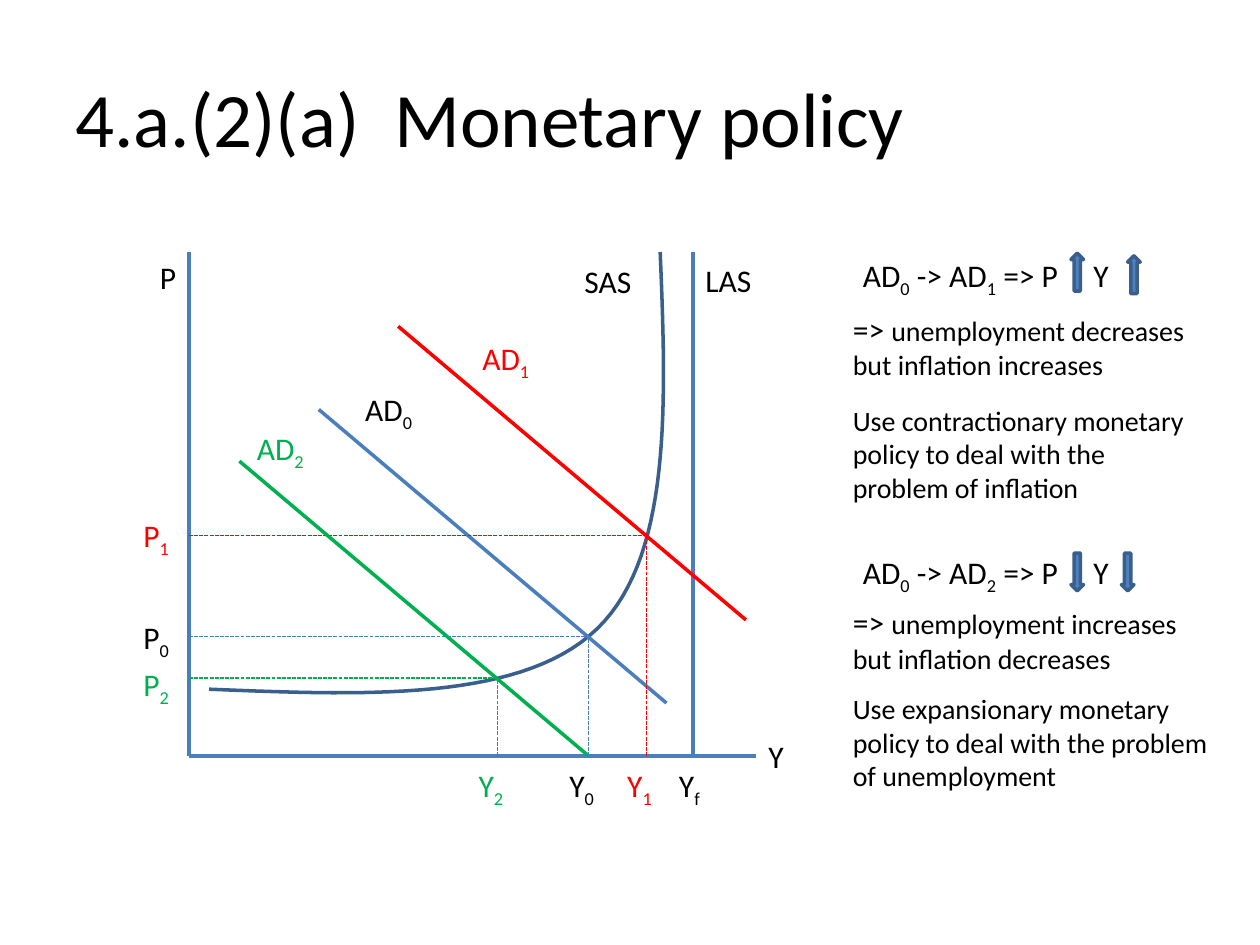
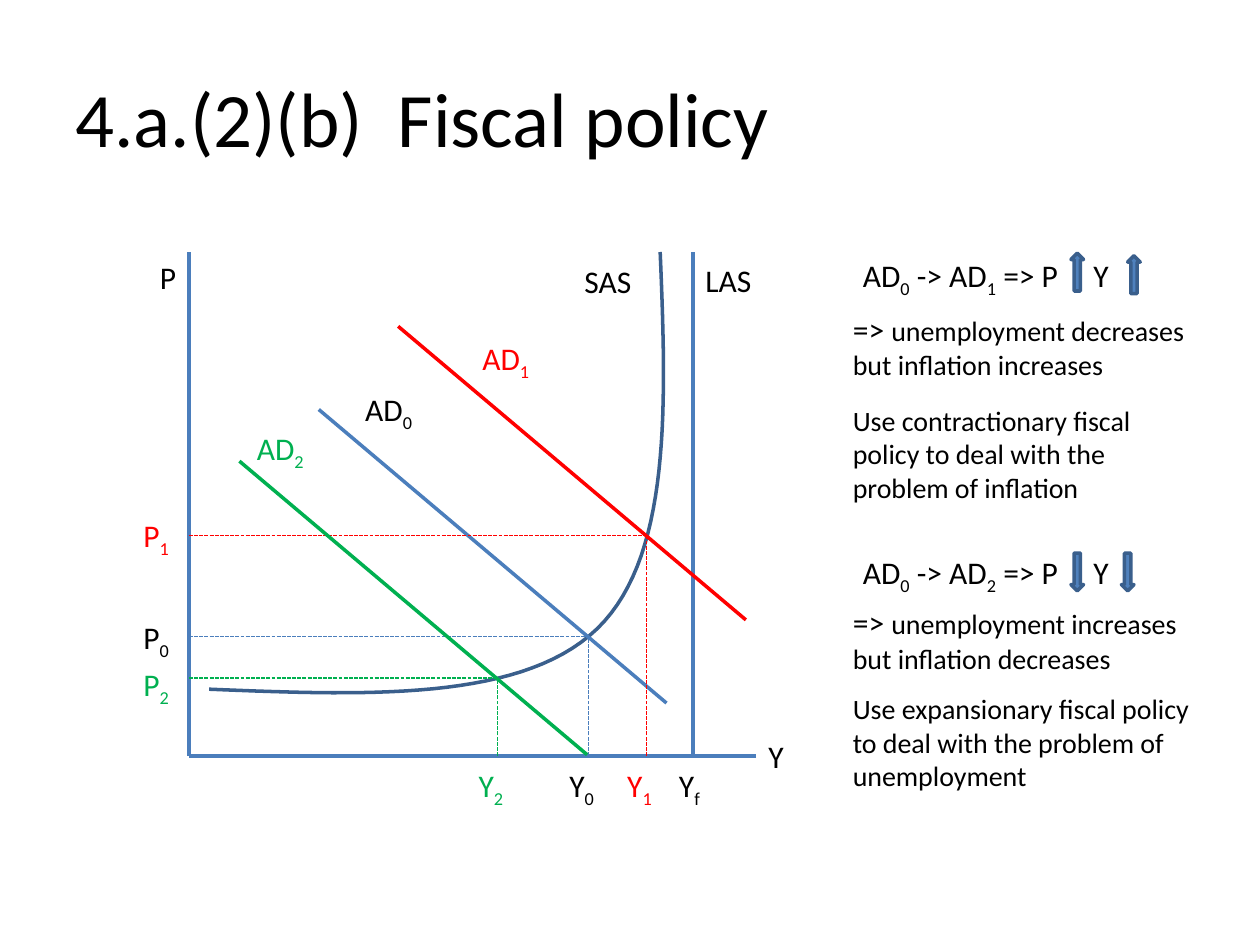
from lxml import etree
from pptx import Presentation
from pptx.dml.color import RGBColor
from pptx.enum.dml import MSO_LINE_DASH_STYLE as DASH
from pptx.enum.shapes import MSO_CONNECTOR, MSO_SHAPE
from pptx.enum.text import MSO_ANCHOR, MSO_AUTO_SIZE, PP_ALIGN
from pptx.oxml.ns import qn
from pptx.util import Inches, Pt

FONT = "Calibri"
COLORS = {"text": "000000", "axis": "4B7EBC", "curve": "3A5F8C",
          "arrow": "4F81BD", "red": "FF0000", "green": "00B050"}

# Slide content: title and the policy named in the advice
SLIDES = [("4.a.(2)(a)  Monetary policy", "monetary"),
          ("4.a.(2)(b)  Fiscal policy", "fiscal")]

# Diagram geometry in inches; an underscore marks a subscript character
ORIGIN_X, ORIGIN_Y = 1.5, 6
AXIS_TOP, AXIS_RIGHT, FULL_OUTPUT_X = 2, 6, 5.5
AD_RUN, AD_DROP = 2.76, 2.33
LABEL_HEIGHT = 0.4
SAS_START = (1.66, 5.47)
SAS_BEZIERS = [((2.9, 5.52), (4.14, 5.57), (4.74, 4.99)),
               ((5.33, 4.42), (5.29, 3.21), (5.24, 2))]
SAS_STEPS = 30

# Fixed labels: text, left, top, width
LABELS = [("P", 1.17, 2, 0.33), ("Y", 6, 5.8, 0.33), ("SAS", 4.54, 2.03, 0.62),
          ("LAS", 5.5, 2.02, 0.62), ("Y_f", 5.29, 6.03, 0.42)]

# Demand curves: number, line colour, label colour, line start,
# label position, equilibrium (output, price), top of the price label
DEMAND_CURVES = [
    (0, "axis", "text", (2.53, 3.25), (2.8, 3.05), (4.67, 5.05), 4.86),
    (1, "red", "red", (3.16, 2.59), (3.73, 2.64), (5.13, 4.25), 4.05),
    (2, "green", "green", (1.9, 3.66), (1.94, 3.36), (3.95, 5.38), 5.23),
]

# Outcomes beside the diagram
OUTCOMES = [
    {"shift": "AD_0 -> AD_1 => P\tY", "shift_top": 1.98,
     "arrow": MSO_SHAPE.UP_ARROW, "arrows_at": [(8.5, 2.01), (8.95, 2.03)],
     "effect": "unemployment decreases but inflation increases", "effect_top": 2.41,
     "advice": "Use contractionary {} policy to deal with the problem of inflation",
     "advice_top": 3.15, "advice_width": 2.92},
    {"shift": "AD_0 -> AD_2 => P\tY", "shift_top": 4.34,
     "arrow": MSO_SHAPE.DOWN_ARROW, "arrows_at": [(8.5, 4.39), (8.9, 4.39)],
     "effect": "unemployment increases but inflation decreases", "effect_top": 4.74,
     "advice": "Use expansionary {} policy to deal with the problem of unemployment",
     "advice_top": 5.44, "advice_width": 3.04},
]
SHIFT_LEFT, NOTE_LEFT, Y_TAB = 6.75, 6.67, 1.83


def rgb(color):
    return RGBColor.from_string(COLORS[color])


def style_font(font, size, color="text"):
    font.name, font.size = FONT, Pt(size)
    font.color.rgb = rgb(color)


def add_run(paragraph, text, size, color="text", subscript=False):
    run = paragraph.add_run()
    run.text = text
    style_font(run.font, size, color)
    if subscript:
        run.font._element.set("baseline", "-25000")


def add_text(slide, left, top, width, height, parts, color="text"):
    """Add a text box from (text, size) parts."""
    box = slide.shapes.add_textbox(*map(Inches, (left, top, width, height)))
    frame = box.text_frame
    frame.word_wrap = True
    frame.auto_size = MSO_AUTO_SIZE.SHAPE_TO_FIT_TEXT
    paragraph = frame.paragraphs[0]
    for text, size in parts:
        plain, *marked = text.split("_")
        add_run(paragraph, plain, size, color)
        for piece in marked:
            add_run(paragraph, piece[0], size, color, subscript=True)
            if piece[1:]:
                add_run(paragraph, piece[1:], size, color)
    return paragraph


def add_label(slide, text, left, top, width, color="text"):
    return add_text(slide, left, top, width, LABEL_HEIGHT, [(text, 18)], color)


def add_line(slide, start, end, color, width=2, dash=None):
    line = slide.shapes.add_connector(
        MSO_CONNECTOR.STRAIGHT, *map(Inches, (*start, *end)))
    line.line.color.rgb = rgb(color)
    line.line.width = Pt(width)
    if dash:
        line.line.dash_style = dash
    etree.SubElement(line._element.spPr, qn("a:effectLst"))


def sas_points():
    start = SAS_START
    for first, second, end in SAS_BEZIERS:
        for step in range(1, SAS_STEPS + 1):
            t = step / SAS_STEPS
            weights = ((1 - t) ** 3, 3 * t * (1 - t) ** 2, 3 * t ** 2 * (1 - t), t ** 3)
            corners = (start, first, second, end)
            yield tuple(Inches(sum(w * c[axis] for w, c in zip(weights, corners)))
                        for axis in (0, 1))
        start = end


def add_sas_curve(slide):
    builder = slide.shapes.build_freeform(*map(Inches, SAS_START))
    builder.add_line_segments(list(sas_points()), close=False)
    curve = builder.convert_to_shape()
    curve.shadow.inherit = False
    curve.fill.background()
    curve.line.color.rgb = rgb("curve")
    curve.line.width = Pt(2)


def add_diagram(slide):
    # Axes, supply curves and fixed labels
    origin = (ORIGIN_X, ORIGIN_Y)
    add_line(slide, (ORIGIN_X, AXIS_TOP), origin, "axis")
    add_line(slide, (AXIS_RIGHT, ORIGIN_Y), origin, "axis")
    add_sas_curve(slide)
    add_line(slide, (FULL_OUTPUT_X, AXIS_TOP), (FULL_OUTPUT_X, ORIGIN_Y), "axis")
    for label in LABELS:
        add_label(slide, *label)

    # Demand curves with dashed guides to both axes
    for number, color, label_color, start, label_at, point, price_top in DEMAND_CURVES:
        output, price = point
        add_line(slide, start, (start[0] + AD_RUN, start[1] + AD_DROP), color)
        for foot in ((output, ORIGIN_Y), (ORIGIN_X, price)):
            add_line(slide, foot, point, color, 0.75, DASH.SQUARE_DOT)
        add_label(slide, f"AD_{number}", *label_at, 0.71, label_color)
        add_label(slide, f"Y_{number}", output - 0.25, 6.03, 0.5, label_color)
        add_label(slide, f"P_{number}", 1.04, price_top, 0.58, label_color)


def add_outcome(slide, outcome, policy):
    shift = add_label(slide, outcome["shift"], SHIFT_LEFT, outcome["shift_top"], 2.5)
    tabs = etree.SubElement(shift._p.get_or_add_pPr(), qn("a:tabLst"))
    etree.SubElement(tabs, qn("a:tab"), pos=str(Inches(Y_TAB)), algn="l")
    for left, top in outcome["arrows_at"]:
        arrow = slide.shapes.add_shape(
            outcome["arrow"], *map(Inches, (left, top, 0.1, 0.3)))
        arrow.shadow.inherit = False
        arrow.fill.solid()
        arrow.fill.fore_color.rgb = rgb("arrow")
        arrow.line.color.rgb = rgb("curve")
        arrow.line.width = Pt(2)
    add_text(slide, NOTE_LEFT, outcome["effect_top"], 2.92, 0.67,
             [("=> ", 18), (outcome["effect"], 16)])
    add_text(slide, NOTE_LEFT, outcome["advice_top"], outcome["advice_width"], 0.91,
             [(outcome["advice"].format(policy), 16)])


def add_title(slide, text):
    title = slide.shapes.title
    title.left, title.top, title.width, title.height = map(Inches, (0.5, 0.3, 9, 1.25))
    title.text_frame.text = text
    title.text_frame.vertical_anchor = MSO_ANCHOR.MIDDLE
    paragraph = title.text_frame.paragraphs[0]
    paragraph.alignment = PP_ALIGN.LEFT
    style_font(paragraph.runs[0].font, 44)


def main():
    presentation = Presentation()
    presentation.slide_width, presentation.slide_height = Inches(10), Inches(7.5)
    title_only = presentation.slide_layouts[5]
    for title, policy in SLIDES:
        slide = presentation.slides.add_slide(title_only)
        add_title(slide, title)
        add_diagram(slide)
        for outcome in OUTCOMES:
            add_outcome(slide, outcome, policy)
    presentation.save("out.pptx")


if __name__ == "__main__":
    main()
